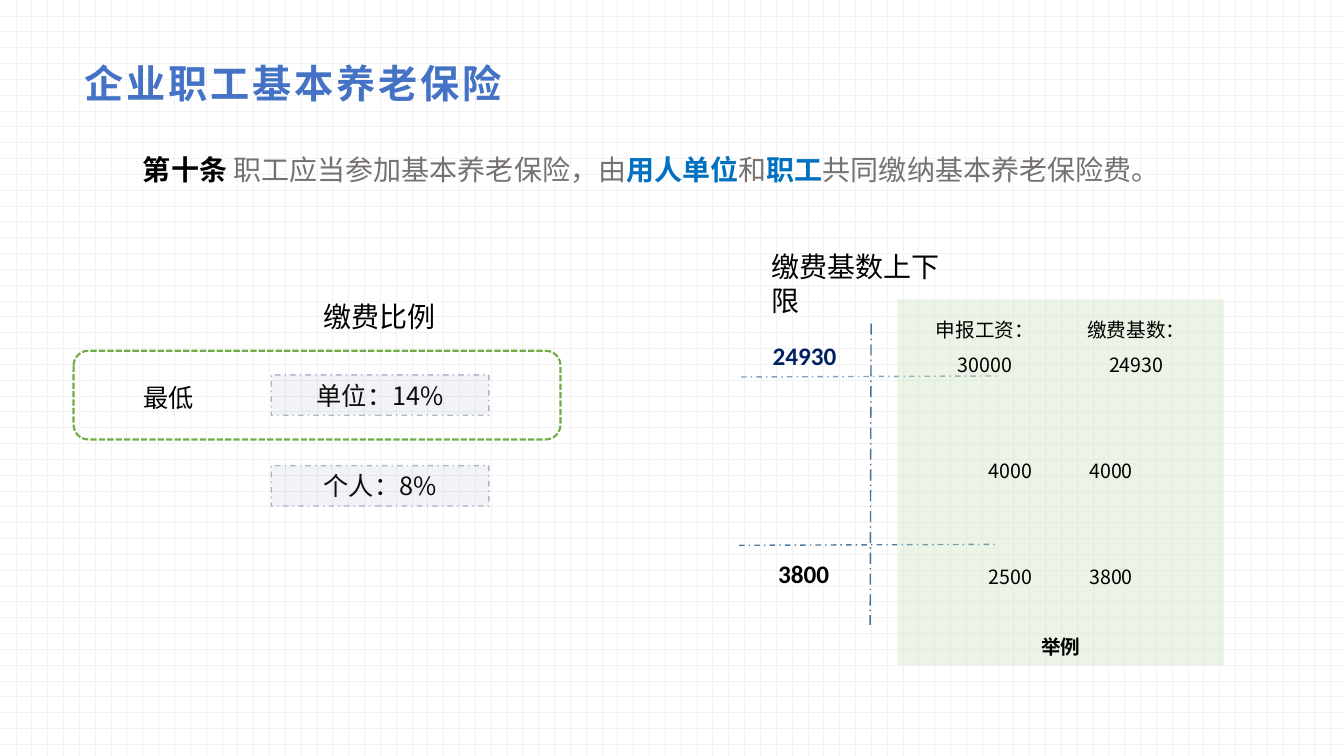
from dataclasses import dataclass
from lxml.etree import SubElement
from pptx import Presentation
from pptx.dml.color import RGBColor
from pptx.enum.dml import MSO_LINE, MSO_PATTERN
from pptx.enum.shapes import MSO_CONNECTOR, MSO_SHAPE
from pptx.enum.text import MSO_ANCHOR, PP_ALIGN
from pptx.oxml.ns import qn
from pptx.util import Inches, Pt


@dataclass(frozen=True)
class Theme:
    face: str = "Noto Sans CJK SC"
    digits: str = "Calibri"
    label: str = "Arial"
    title: int = 28
    lead: int = 20
    body: int = 18
    small: int = 14
    black: RGBColor = RGBColor(0, 0, 0)
    ink: RGBColor = RGBColor(0x0D, 0x0D, 0x0D)
    gray: RGBColor = RGBColor(0x76, 0x71, 0x71)
    blue: RGBColor = RGBColor(0x44, 0x72, 0xC4)
    bright: RGBColor = RGBColor(0x00, 0x70, 0xC0)
    navy: RGBColor = RGBColor(0x00, 0x20, 0x60)
    steel: RGBColor = RGBColor(0x43, 0x73, 0x9E)
    green: RGBColor = RGBColor(0x70, 0xAD, 0x47)
    pale: RGBColor = RGBColor(0xC5, 0xE0, 0xB4)
    grid: RGBColor = RGBColor(0xF2, 0xF2, 0xF2)
    white: RGBColor = RGBColor(0xFF, 0xFF, 0xFF)


def style(font, size, color, bold=False, face=Theme.face):
    font.name, font.size, font.bold = face, Pt(size), bold
    font.color.rgb = color


def fade(part, percent):
    for color in part.iter(qn("a:srgbClr")):
        SubElement(color, qn("a:alpha"), val=str(percent * 1000))


theme = Theme()
deck = Presentation()
deck.slide_width, deck.slide_height = Inches(13.33), Inches(7.5)
slide = deck.slides.add_slide(deck.slide_layouts[5])
shapes = slide.shapes

back = slide.background.fill
back.patterned()
back.pattern = MSO_PATTERN.DOTTED_GRID
back.fore_color.rgb, back.back_color.rgb = theme.grid, theme.white

title = shapes.title
title.left, title.top = Inches(0.73), Inches(0.47)
title.width, title.height = Inches(11.87), Inches(0.71)
frame = title.text_frame
frame.vertical_anchor = MSO_ANCHOR.MIDDLE
frame.margin_left, frame.margin_right = Inches(0.11), Inches(0.08)
frame.margin_top = frame.margin_bottom = Inches(0.04)
para = frame.paragraphs[0]
para.alignment = PP_ALIGN.LEFT
run = para.add_run()
run.text = "企业职工基本养老保险"
style(para.font, theme.title, theme.blue, True)
run.font._element.set("spc", "200")

clause = shapes.add_textbox(Inches(1.32), Inches(1.46), Inches(10.36), Inches(0.44))
clause.text_frame.word_wrap = True
para = clause.text_frame.paragraphs[0]
for text, color, bold in [
    ("第十条 ", theme.black, True),
    ("职工应当参加基本养老保险，由", theme.gray, False),
    ("用人单位", theme.bright, True),
    ("和", theme.gray, False),
    ("职工", theme.bright, True),
    ("共同缴纳基本养老保险费。", theme.gray, False),
]:
    run = para.add_run()
    run.text = text
    style(run.font, theme.lead, color, bold)

for top, text in [(3.72, "单位：14%"), (4.62, "个人：8%")]:
    rate = shapes.add_shape(MSO_SHAPE.RECTANGLE, Inches(2.69), Inches(top), Inches(2.16), Inches(0.4))
    rate.shadow.inherit = False
    rate.fill.solid()
    rate.fill.fore_color.rgb = theme.navy
    fade(rate.fill._xPr.find(qn("a:solidFill")), 5)
    rate.line.color.rgb = theme.navy
    rate.line.width = Pt(1)
    rate.line.dash_style = MSO_LINE.DASH_DOT
    fade(rate.line._ln, 30)
    para = rate.text_frame.paragraphs[0]
    para.text = text
    para.alignment = PP_ALIGN.CENTER
    style(para.font, theme.body, theme.ink)

for x1, y1, x2, y2, dash, alpha in [
    (8.64, 3.21, 8.63, 6.2, MSO_LINE.LONG_DASH_DOT, 100),
    (7.35, 3.74, 9.9, 3.73, MSO_LINE.DASH_DOT, 66),
    (7.33, 5.41, 9.87, 5.4, MSO_LINE.DASH_DOT, 93),
]:
    axis = shapes.add_connector(MSO_CONNECTOR.STRAIGHT, Inches(x1), Inches(y1), Inches(x2), Inches(y2))
    axis.line.color.rgb = theme.steel
    axis.line.width = Pt(1)
    axis.line.dash_style = dash
    fade(axis.line._ln, alpha)
    SubElement(axis._element.spPr, qn("a:effectLst"))

left, center = PP_ALIGN.LEFT, PP_ALIGN.CENTER
for x, y, wide, high, text, align, size, color, bold, face in [
    (3.11, 2.92, 1.35, 0.44, "缴费比例", left, theme.lead, theme.black, False, theme.face),
    (7.55, 2.43, 2.05, 0.77, "缴费基数上下限", left, theme.lead, theme.black, False, theme.face),
    (7.34, 3.33, 1.28, 0.4, "24930", center, theme.body, theme.navy, True, theme.digits),
    (7.33, 5.49, 1.28, 0.4, "3800", center, theme.body, theme.black, True, theme.digits),
    (1.32, 3.74, 0.75, 0.4, "最低", left, theme.body, theme.black, False, theme.label),
]:
    note = shapes.add_textbox(Inches(x), Inches(y), Inches(wide), Inches(high))
    note.text_frame.word_wrap = True
    para = note.text_frame.paragraphs[0]
    para.text = text
    para.alignment = align
    style(para.font, size, color, bold, face)

panel = shapes.add_shape(MSO_SHAPE.RECTANGLE, Inches(8.9), Inches(2.97), Inches(3.24), Inches(3.63))
panel.shadow.inherit = False
panel.fill.solid()
panel.fill.fore_color.rgb = theme.pale
fade(panel.fill._xPr, 33)
panel.line.fill.background()
frame = panel.text_frame
frame.vertical_anchor = MSO_ANCHOR.MIDDLE
pitch = 25.2
for row, (text, skip, bold) in enumerate([
    ("申报工资：\t\t缴费基数：", 0, False),
    ("30000\t\t24930", 0, False),
    ("4000\t\t4000", 2, False),
    ("2500\t\t3800", 2, False),
    ("举例", 1, True),
]):
    para = frame.add_paragraph() if row else frame.paragraphs[0]
    para.text = text
    para.alignment = PP_ALIGN.CENTER
    para.line_spacing = Pt(pitch)
    para.space_before = Pt(skip * pitch)
    style(para.font, theme.small, theme.black, bold)

frame = shapes.add_shape(MSO_SHAPE.ROUNDED_RECTANGLE, Inches(0.73), Inches(3.48), Inches(4.83), Inches(0.88))
frame.shadow.inherit = False
frame.fill.background()
frame.line.color.rgb = theme.green
frame.line.width = Pt(1.5)
frame.line.dash_style = MSO_LINE.SQUARE_DOT

deck.save("out.pptx")
